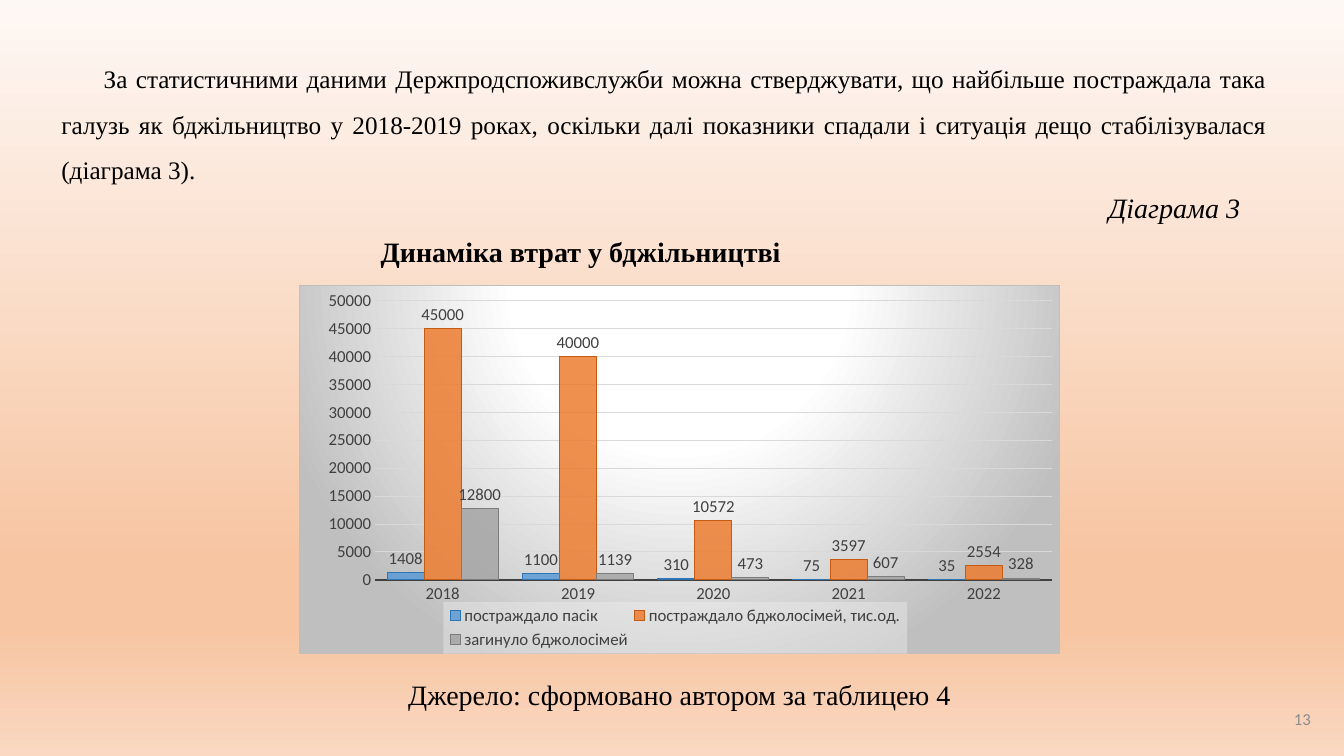
"""Build the slide on losses in beekeeping, 2018-2022."""
from pptx import Presentation, util as u
from pptx.chart.data import CategoryChartData
from pptx.dml.color import RGBColor
from pptx.enum import chart as ch, text as t
from pptx.oxml import parse_xml
from pptx.oxml.ns import nsdecls

theme = {
    "serif": "Times New Roman", "sans": "Calibri",
    "body": 18, "head": 20, "small": 12,
    "ink": "000000", "grey": "404040", "page": "8C8C8C",
    "grid": "D9D9D9", "edge": "BFBFBF", "key": "F2F2F2",
    "back": [(0, "FEF8F5"), (74, "F7C5A2"), (83, "F7C5A2"), (100, "FAD8C1")],
    "glow": [(0, "FFFFFF"), (39, "FFFFFF"), (100, "BFBFBF")],
    "bars": [("5B9BD5", "2E75B6"), ("ED7D31", "C55A11"), ("A5A5A5", "7C7C7C")],
}
rgb = RGBColor.from_string

deck = Presentation()
deck.slide_width, deck.slide_height = u.Inches(13.33), u.Inches(7.5)
col, row = deck.slide_width / 100, deck.slide_height / 100
slide = deck.slides.add_slide(deck.slide_layouts[6])


def grad(stops, tail):
    """Return a gradient fill with the given stops and direction."""
    marks = "".join(f'<a:gs pos="{pos * 1000}"><a:srgbClr val="{tone}"/></a:gs>'
                    for pos, tone in stops)
    return parse_xml(f'<a:gradFill {nsdecls("a")} rotWithShape="1">'
                     f'<a:gsLst>{marks}</a:gsLst>{tail}</a:gradFill>')


def write(words, x, y, w, h, size, align, face="serif", tone="ink", gap=0.9):
    """Add a one-paragraph text box, placed in columns and rows."""
    box = slide.shapes.add_textbox(*map(int, (x * col, y * row, w * col, h * row)))
    box.text_frame.word_wrap = True
    para = box.text_frame.paragraphs[0]
    para.text, para.alignment, para.line_spacing = words, align, gap
    font = para.font
    font.name, font.size = theme[face], u.Pt(theme[size])
    font.color.rgb = rgb(theme[tone])
    return box.text_frame, para


slide.background.fill.gradient()
old = slide.element.xpath(".//p:bgPr/a:gradFill")[0]
old.getparent().replace(old, grad(theme["back"], '<a:lin ang="5400000" scaled="0"/>'))

frame, para = write(
    "За статистичними даними Держпродспоживслужби можна стверджувати, що "
    "найбільше постраждала така галузь як бджільництво у 2018-2019 роках, "
    "оскільки далі показники спадали і ситуація дещо стабілізувалася (діаграма 3).",
    3.83, 6.8, 91.15, 18.27, "body", t.PP_ALIGN.JUSTIFY, gap=1.5)
frame.vertical_anchor = t.MSO_ANCHOR.BOTTOM
para._p.get_or_add_pPr().set("indent", str(u.Inches(0.42)))

frame, para = write("Діаграма 3", 8.1, 25.07, 84.92, 5.33, "head", t.PP_ALIGN.RIGHT)
para.font.italic = True
frame, para = write("Динаміка втрат у бджільництві", 0.75, 30.8, 84.92, 5.33,
                    "head", t.PP_ALIGN.CENTER)
para.font.bold = True
write("Джерело: сформовано автором за таблицею 4", 8.1, 89.47, 84.92, 5.33,
      "head", t.PP_ALIGN.CENTER)

data = CategoryChartData()
data.categories = ["2018", "2019", "2020", "2021", "2022"]
data.add_series("постраждало пасік", (1408, 1100, 310, 75, 35))
data.add_series("постраждало бджолосімей, тис.од.", (45000, 40000, 10572, 3597, 2554))
data.add_series("загинуло бджолосімей", (12800, 1139, 473, 607, 328))
place = map(int, (22.21 * col, 37.73 * row, 56.64 * col, 48.8 * row))
chart = slide.shapes.add_chart(ch.XL_CHART_TYPE.COLUMN_CLUSTERED, *place, data).chart
chart.has_title = False
chart.font.name, chart.font.size = theme["sans"], u.Pt(theme["small"])
chart.font.color.rgb = rgb(theme["grey"])

plot = chart.plots[0]
plot.gap_width, plot.overlap, plot.vary_by_categories = 65, 0, False
for bar, (fill, line) in zip(plot.series, theme["bars"]):
    bar.format.fill.solid()
    bar.format.fill.fore_color.rgb = rgb(fill)
    tint = bar._element.xpath("c:spPr/a:solidFill/a:srgbClr")[0]
    tint.append(parse_xml(f'<a:alpha {nsdecls("a")} val="85000"/>'))
    bar.format.line.color.rgb = rgb(line)
    bar.format.line.width = u.Pt(0.75)
    tags = bar.data_labels
    tags.show_value, tags.position = True, ch.XL_LABEL_POSITION.OUTSIDE_END
    tags.font.name, tags.font.size = theme["sans"], u.Pt(theme["small"])
    tags.font.color.rgb = rgb(theme["grey"])

cat, val = chart.category_axis, chart.value_axis
for axis in (cat, val):
    axis.major_tick_mark = axis.minor_tick_mark = ch.XL_TICK_MARK.NONE
cat.format.line.color.rgb = rgb(theme["grey"])
cat.format.line.width = u.Pt(1.5)
val.minimum_scale, val.maximum_scale, val.major_unit = 0, 50000, 5000
val.format.line.fill.background()
val.major_gridlines.format.line.color.rgb = rgb(theme["grid"])
val.major_gridlines.format.line.width = u.Pt(0.75)

chart.has_legend = True
legend = chart.legend
legend.position, legend.include_in_layout = ch.XL_LEGEND_POSITION.BOTTOM, False
legend.font.name, legend.font.size = theme["sans"], u.Pt(theme["small"])
legend.font.color.rgb = rgb(theme["grey"])

root = chart._chartSpace
area, key = root.xpath(".//c:plotArea")[0], root.xpath(".//c:legend")[0]
for part, spot, inner, share in (
        (area, 0, '<c:layoutTarget val="inner"/>', (0.1, 0.04, 0.89, 0.76)),
        (key, 1, "", (0.19, 0.86, 0.61, 0.14))):
    for old in part.xpath("c:layout"):
        part.remove(old)
    sides = "".join(f'<c:{side} val="{size}"/>' for side, size in zip("xywh", share))
    part.insert(spot, parse_xml(
        f'<c:layout {nsdecls("c")}><c:manualLayout>{inner}<c:xMode val="edge"/>'
        f'<c:yMode val="edge"/>{sides}</c:manualLayout></c:layout>'))

key.xpath("c:txPr")[0].addprevious(parse_xml(
    f'<c:spPr {nsdecls("c", "a")}><a:solidFill><a:srgbClr val="{theme["key"]}">'
    '<a:alpha val="39000"/></a:srgbClr></a:solidFill></c:spPr>'))
skin = parse_xml(
    f'<c:spPr {nsdecls("c", "a")}><a:ln w="{u.Pt(0.75)}"><a:solidFill>'
    f'<a:srgbClr val="{theme["edge"]}"/></a:solidFill></a:ln></c:spPr>')
skin.insert(0, grad(theme["glow"], '<a:path path="circle"><a:fillToRect l="50000" '
                    't="-80000" r="50000" b="180000"/></a:path>'))
root.xpath("c:txPr")[0].addprevious(skin)

frame, para = write("13", 93.77, 92.27, 4.5, 5.73, "small", t.PP_ALIGN.RIGHT,
                    "sans", "page", 1.0)
frame.vertical_anchor = t.MSO_ANCHOR.MIDDLE

deck.save("out.pptx")
